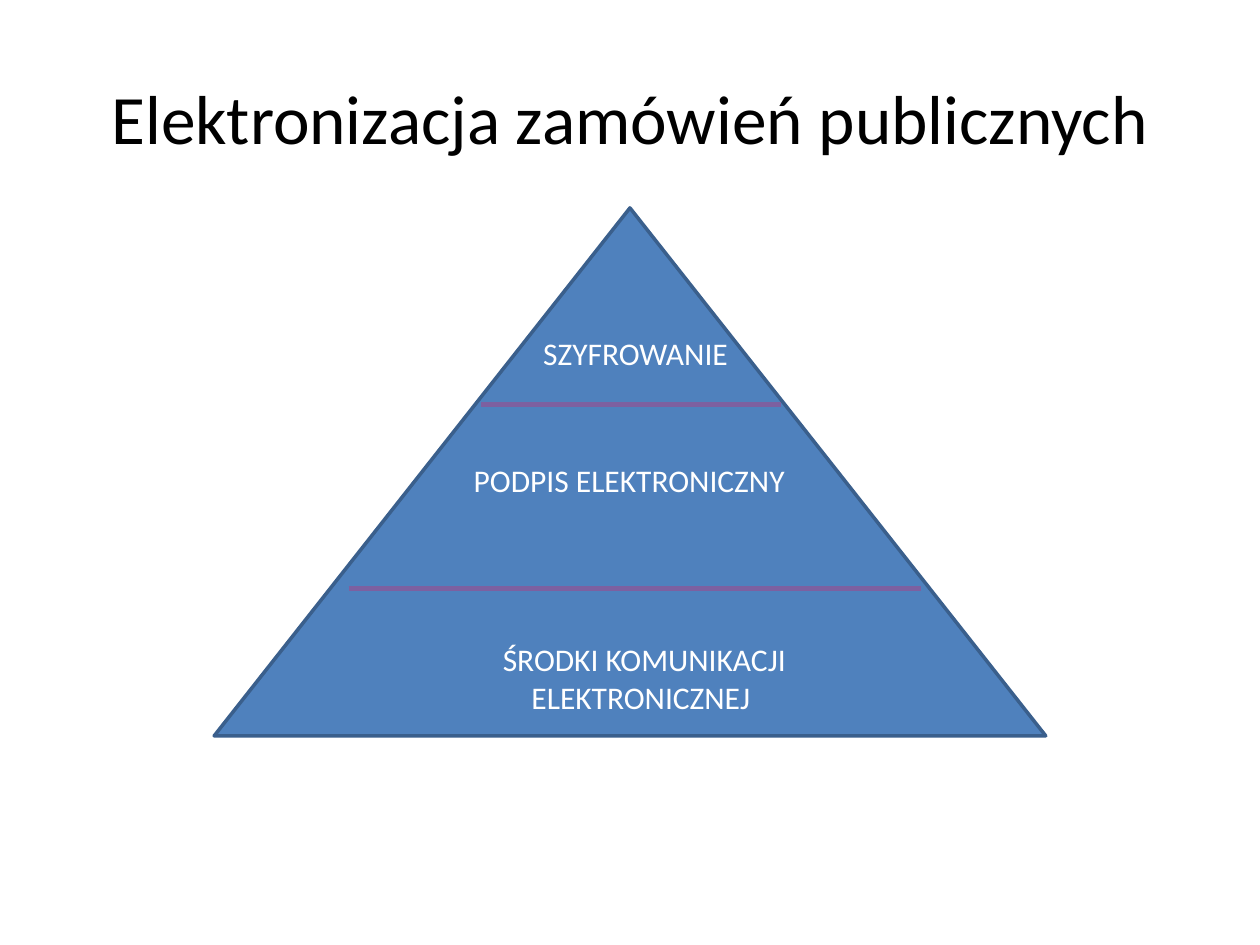
from lxml.etree import SubElement
from pptx import Presentation
from pptx.dml.color import RGBColor
from pptx.enum.shapes import MSO_CONNECTOR as Connector, MSO_SHAPE as Shape
from pptx.enum.text import MSO_ANCHOR as Anchor, MSO_AUTO_SIZE as AutoSize, PP_ALIGN as Align
from pptx.oxml.ns import qn
from pptx.util import Inches, Pt

COLORS = {
    "title": "000000",
    "label": "FFFFFF",
    "pyramid": "4F81BD",
    "outline": "3A5F8C",
    "divider": "7D60A0",
}


class PyramidSlide:
    font_name = "Calibri"

    def __init__(self, page):
        self.page = page

    def color(self, name):
        return RGBColor.from_string(COLORS[name])

    def style(self, para, size, color):
        para.alignment = Align.CENTER
        para.font.name = self.font_name
        para.font.size = Pt(size)
        para.font.color.rgb = self.color(color)

    def title(self, text, left, top, width, height):
        box = self.page.shapes.title
        box.left, box.top = Inches(left), Inches(top)
        box.width, box.height = Inches(width), Inches(height)
        frame = box.text_frame
        frame.text = text
        frame.vertical_anchor = Anchor.MIDDLE
        self.style(frame.paragraphs[0], 39.6, "title")

    def pyramid(self, left, top, width, height):
        triangle = self.page.shapes.add_shape(
            Shape.ISOSCELES_TRIANGLE,
            Inches(left), Inches(top), Inches(width), Inches(height))
        triangle.shadow.inherit = False
        triangle.fill.solid()
        triangle.fill.fore_color.rgb = self.color("pyramid")
        triangle.line.color.rgb = self.color("outline")
        triangle.line.width = Pt(2)

    def divider(self, left, right, y):
        line = self.page.shapes.add_connector(
            Connector.STRAIGHT, Inches(left), Inches(y), Inches(right), Inches(y))
        line.line.color.rgb = self.color("divider")
        line.line.width = Pt(3)
        SubElement(line._element.spPr, qn("a:effectLst"))

    def label(self, text, left, top, height, width=3.03):
        box = self.page.shapes.add_textbox(
            Inches(left), Inches(top), Inches(width), Inches(height))
        frame = box.text_frame
        frame.word_wrap = True
        frame.auto_size = AutoSize.SHAPE_TO_FIT_TEXT
        frame.text = text
        self.style(frame.paragraphs[0], 18, "label")


def main():
    deck = Presentation()
    deck.slide_width, deck.slide_height = Inches(10), Inches(7.5)
    title_only = deck.slide_layouts[5]
    slide = PyramidSlide(deck.slides.add_slide(title_only))

    slide.title("Elektronizacja zamówień publicznych", 0.5, 0.3, 9, 1.25)
    slide.pyramid(1.7, 1.65, 6.6, 4.19)
    slide.divider(2.77, 7.31, 4.67)
    slide.divider(3.82, 6.2, 3.21)
    slide.label("ŚRODKI KOMUNIKACJI ELEKTRONICZNEJ ", 3.6, 5.03, 0.71)
    slide.label("PODPIS ELEKTRONICZNY", 3.48, 3.61, 0.4)
    slide.label("SZYFROWANIE", 3.53, 2.6, 0.4)

    deck.save("out.pptx")


if __name__ == "__main__":
    main()
